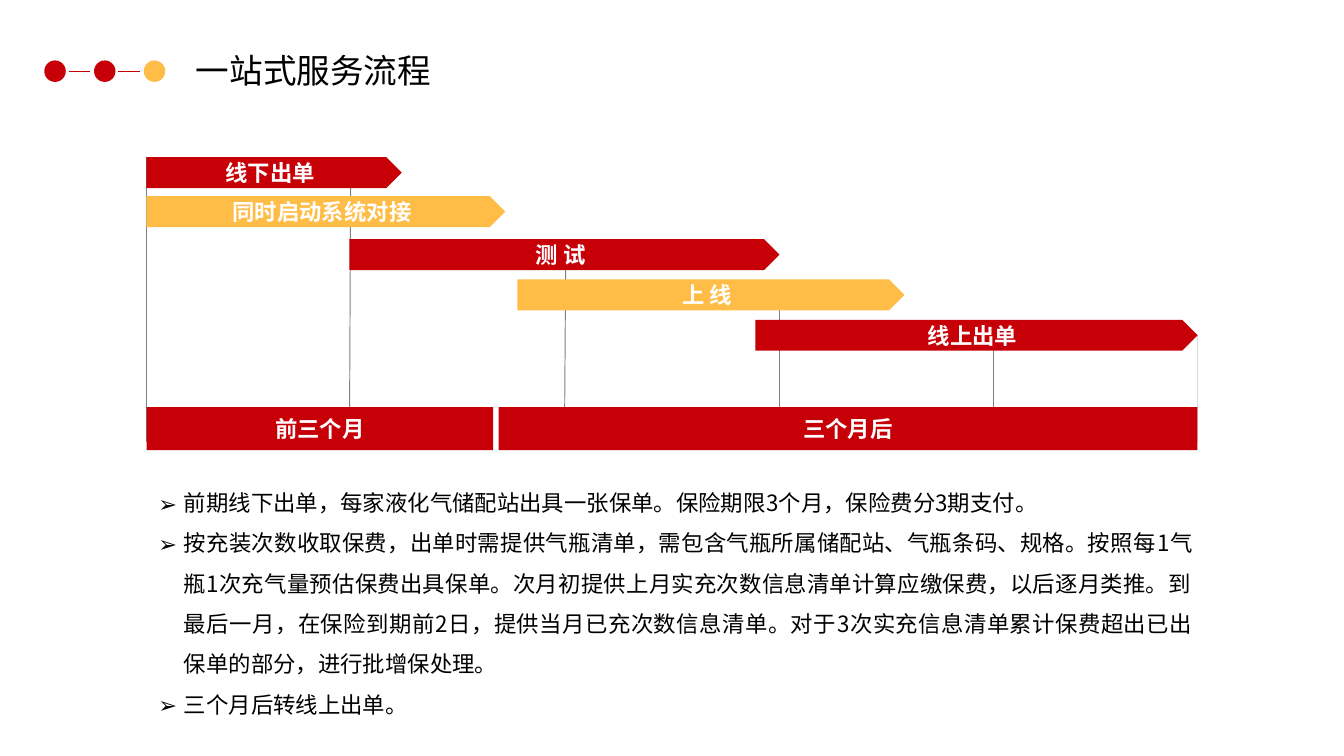
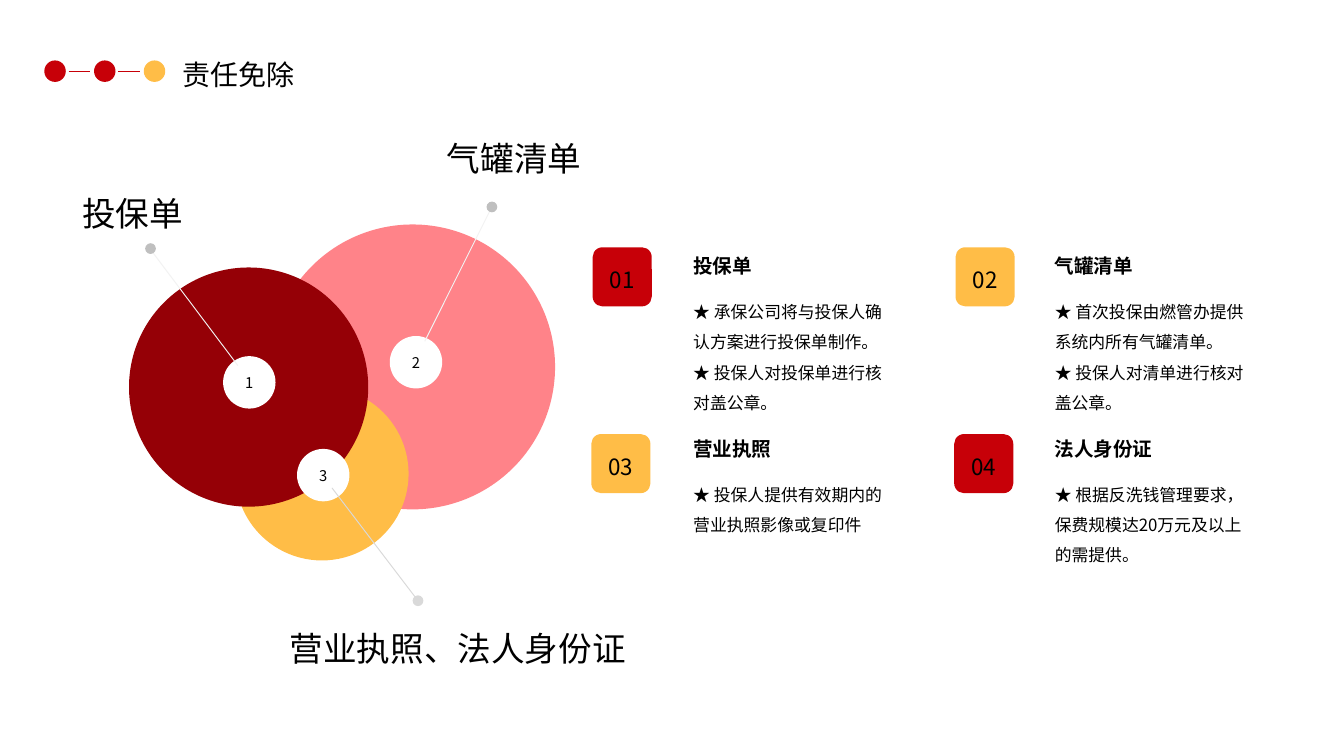
from dataclasses import dataclass

from lxml import etree
from pptx import Presentation
from pptx.dml.color import RGBColor
from pptx.enum.shapes import MSO_CONNECTOR, MSO_SHAPE
from pptx.enum.text import MSO_ANCHOR, MSO_AUTO_SIZE, PP_ALIGN
from pptx.oxml.ns import qn
from pptx.util import Inches, Pt

OVAL, RECT = MSO_SHAPE.OVAL, MSO_SHAPE.RECTANGLE
PENTAGON, ROUNDED = MSO_SHAPE.PENTAGON, MSO_SHAPE.ROUNDED_RECTANGLE
STRAIGHT = MSO_CONNECTOR.STRAIGHT
CENTER, JUSTIFY = PP_ALIGN.CENTER, PP_ALIGN.JUSTIFY
MIDDLE = MSO_ANCHOR.MIDDLE
FIT_SHAPE = MSO_AUTO_SIZE.SHAPE_TO_FIT_TEXT


@dataclass(frozen=True)
class Theme:
    font: str = "Noto Sans CJK SC"
    red: str = "C70008"
    amber: str = "FFBD47"
    dark_red: str = "950006"
    pink: str = "FF444C"
    white: str = "FFFFFF"
    black: str = "000000"
    grid: str = "808080"
    pale: str = "D9D9D9"
    paler: str = "F2F2F2"
    dot: str = "BFBFBF"
    hairline: float = 0.5
    display: float = 18
    title: float = 15
    body: float = 12
    heading: float = 10.5
    small: float = 9
    number: float = 7.9


THEME = Theme()

# Slide 1: title, then (label, left, top, width, colour)
FLOW_TITLE = ("一站式服务流程", (1.36, 0.32, 2.41, 0.4), THEME.display)
STAGES = [
    ("线下出单", 1.09, 1.17, 1.9, THEME.red),
    ("同时启动系统对接", 1.09, 1.46, 2.67, THEME.amber),
    ("测 试", 2.6, 1.78, 3.2, THEME.red),
    ("上 线", 3.85, 2.08, 2.88, THEME.amber),
    ("线上出单", 5.62, 2.38, 3.29, THEME.red),
]
PERIODS = [("前三个月", 1.09, 2.58), ("三个月后", 3.71, 5.2)]
# (x at top, x at bottom, top, bottom, colour)
GRID_LINES = [
    (8.91, 8.91, 2.49, 3.29, THEME.pale),
    (1.09, 1.09, 1.17, 3.29, THEME.grid),
    (2.61, 2.6, 1.17, 3.29, THEME.grid),
    (4.21, 4.2, 1.78, 3.29, THEME.grid),
    (5.8, 5.8, 2.08, 3.32, THEME.grid),
    (7.39, 7.39, 2.45, 3.32, THEME.grid),
]
FLOW_NOTES = [
    "前期线下出单，每家液化气储配站出具一张保单。保险期限3个月，保险费分3期支付。",
    "按充装次数收取保费，出单时需提供气瓶清单，需包含气瓶所属储配站、气瓶条码、规格。"
    "按照每1气瓶1次充气量预估保费出具保单。次月初提供上月实充次数信息清单计算应缴保费，"
    "以后逐月类推。到最后一月，在保险到期前2日，提供当月已充次数信息清单。"
    "对于3次实充信息清单累计保费超出已出保单的部分，进行批增保处理。",
    "三个月后转线上出单。",
]

# Slide 2
EXEMPTION_TITLE = ("责任免除", (1.26, 0.38, 1.81, 0.35), THEME.title)
# (left, top, diameter, colour, opacity in percent)
BUBBLES = [
    (2.01, 1.67, 2.12, THEME.pink, 66),
    (1.75, 2.88, 1.29, THEME.amber, 100),
    (0.96, 1.99, 1.78, THEME.dark_red, 100),
]
BUBBLE_NUMBERS = [("2", 2.9, 2.5), ("1", 1.66, 2.65), ("3", 2.21, 3.34)]
# (line start, line end, line colour, dot left and top, dot colour)
LEADERS = [
    ((3.67, 1.52), (3.16, 2.54), THEME.paler, (3.62, 1.5), THEME.dot),
    ((1.13, 1.87), (1.77, 2.72), THEME.paler, (1.08, 1.81), THEME.dot),
    ((2.47, 3.63), (3.11, 4.47), THEME.pale, (3.07, 4.43), THEME.pale),
]
BUBBLE_LABELS = [
    ("投保单", (0.19, 1.39, 1.59, 0.4)),
    ("气罐清单", (3.03, 0.98, 1.59, 0.4)),
    ("营业执照、法人身份证", (2.01, 4.62, 2.79, 0.4)),
]
# (heading, points, number of lines)
DOCUMENTS = [
    ("投保单", ["★ 承保公司将与投保人确认方案进行投保单制作。",
             "★ 投保人对投保单进行核对盖公章。"], 4),
    ("气罐清单", ["★ 首次投保由燃管办提供系统内所有气罐清单。",
              "★ 投保人对清单进行核对盖公章。"], 4),
    ("营业执照", ["★ 投保人提供有效期内的营业执照影像或复印件"], 2),
    ("法人身份证", ["★ 根据反洗钱管理要求，保费规模达20万元及以上的需提供。"], 3),
]


def inches(values):
    return [Inches(value) for value in values]


def add_bullet(paragraph, char="➢", indent=0.19):
    props = paragraph._p.get_or_add_pPr()
    props.set("marL", str(Inches(indent)))
    props.set("indent", str(-Inches(indent)))
    etree.SubElement(props, qn("a:buFont")).set("typeface", THEME.font)
    etree.SubElement(props, qn("a:buChar")).set("char", char)


def write(frame, texts, size, color=THEME.black, bold=False, bullet=False,
          frame_format=None, **paragraph_format):
    """Fill a text frame with one paragraph for each text."""
    for name, value in (frame_format or {}).items():
        setattr(frame, name, value)
    for index, text in enumerate(texts):
        paragraph = frame.add_paragraph() if index else frame.paragraphs[0]
        if bullet:
            add_bullet(paragraph)
        for name, value in paragraph_format.items():
            setattr(paragraph, name, value)
        run = paragraph.add_run()
        run.text = text
        font_format = {"name": THEME.font, "size": Pt(size), "bold": bold}
        for name, value in font_format.items():
            setattr(run.font, name, value)
        run.font.color.rgb = RGBColor.from_string(color)
        east_asian = etree.SubElement(run._r.get_or_add_rPr(), qn("a:ea"))
        east_asian.set("typeface", THEME.font)


def add_text(slide, box, texts, size, **text_format):
    frame = slide.shapes.add_textbox(*inches(box)).text_frame
    write(frame, texts, size,
          frame_format={"word_wrap": True, "auto_size": FIT_SHAPE}, **text_format)


def add_block(slide, kind, box, color, opacity=100):
    block = slide.shapes.add_shape(kind, *inches(box))
    block.shadow.inherit = False
    block.fill.solid()
    block.fill.fore_color.rgb = RGBColor.from_string(color)
    block.line.fill.background()
    if opacity < 100:
        rgb = block._element.spPr.find(qn("a:solidFill"))[0]
        etree.SubElement(rgb, qn("a:alpha")).set("val", str(opacity * 1000))
    return block


def add_line(slide, start, end, color):
    line = slide.shapes.add_connector(STRAIGHT, *inches((*start, *end)))
    line.line.color.rgb = RGBColor.from_string(color)
    line.line.width = Pt(THEME.hairline)
    etree.SubElement(line._element.spPr, qn("a:effectLst"))


def add_header(slide, title, box, size):
    left, pitch, diameter = 0.33, 0.37, 0.16
    for index, color in enumerate((THEME.red, THEME.red, THEME.amber)):
        add_block(slide, OVAL, (left + index * pitch, 0.45, diameter, diameter), color)
    for index in range(2):
        start = 0.51 + index * pitch
        add_line(slide, (start, 0.53), (start + 0.16, 0.53), THEME.red)
    add_text(slide, box, [title], size)


def add_bar(slide, kind, box, label, color):
    bar = add_block(slide, kind, box, color)
    write(bar.text_frame, [label], THEME.body, THEME.white, bold=True,
          frame_format={"word_wrap": False, "vertical_anchor": MIDDLE},
          alignment=CENTER)


def build_flow(slide):
    add_header(slide, *FLOW_TITLE)
    for x_top, x_bottom, top, bottom, color in GRID_LINES:
        add_line(slide, (x_top, top), (x_bottom, bottom), color)
    for label, left, width in PERIODS:
        add_bar(slide, RECT, (left, 3.03, width, 0.32), label, THEME.red)
    for label, left, top, width, color in STAGES:
        add_bar(slide, PENTAGON, (left, top, width, 0.23), label, color)
    add_text(slide, (1.08, 3.49, 7.89, 1.92), FLOW_NOTES, THEME.body,
             bullet=True, alignment=JUSTIFY, line_spacing=1.5)


def add_document(slide, index, heading, points, lines):
    row, column = divmod(index, 2)
    color = THEME.amber if (row + column) % 2 else THEME.red
    badge_left = 4.41 + 2.7 * column - 0.01 * row
    badge = add_block(slide, ROUNDED, (badge_left, 1.84 + 1.39 * row, 0.44, 0.44), color)
    margins = dict.fromkeys(
        ("margin_left", "margin_top", "margin_right", "margin_bottom"), 0)
    write(badge.text_frame, [f"{index + 1:02}"], THEME.body,
          frame_format={"vertical_anchor": MIDDLE, **margins},
          alignment=CENTER, line_spacing=1.2)
    left, top, width = 5.06 + 2.69 * column, 1.84 + 1.36 * row, 1.7
    add_text(slide, (left, top, width, 0.28), [heading], THEME.heading, bold=True)
    add_text(slide, (left, top + 0.28, width, 0.1 + 0.23 * lines), points,
             THEME.small, line_spacing=1.5)


def build_exemption(slide):
    add_header(slide, *EXEMPTION_TITLE)
    for left, top, diameter, color, opacity in BUBBLES:
        add_block(slide, OVAL, (left, top, diameter, diameter), color, opacity)
    for number, left, top in BUBBLE_NUMBERS:
        disc = add_block(slide, OVAL, (left, top, 0.39, 0.39), THEME.white)
        write(disc.text_frame, [number], THEME.number,
              frame_format={"vertical_anchor": MIDDLE}, alignment=CENTER)
    for start, end, line_color, dot_corner, dot_color in LEADERS:
        add_line(slide, start, end, line_color)
        add_block(slide, OVAL, (*dot_corner, 0.08, 0.08), dot_color)
    for index, document in enumerate(DOCUMENTS):
        add_document(slide, index, *document)
    for label, box in BUBBLE_LABELS:
        add_text(slide, box, [label], THEME.display, alignment=CENTER)


def main():
    deck = Presentation()
    deck.slide_width = Inches(10)
    deck.slide_height = deck.slide_width * 9 // 16
    blank = deck.slide_layouts[6]
    for build in (build_flow, build_exemption):
        build(deck.slides.add_slide(blank))
    deck.save("out.pptx")


if __name__ == "__main__":
    main()
